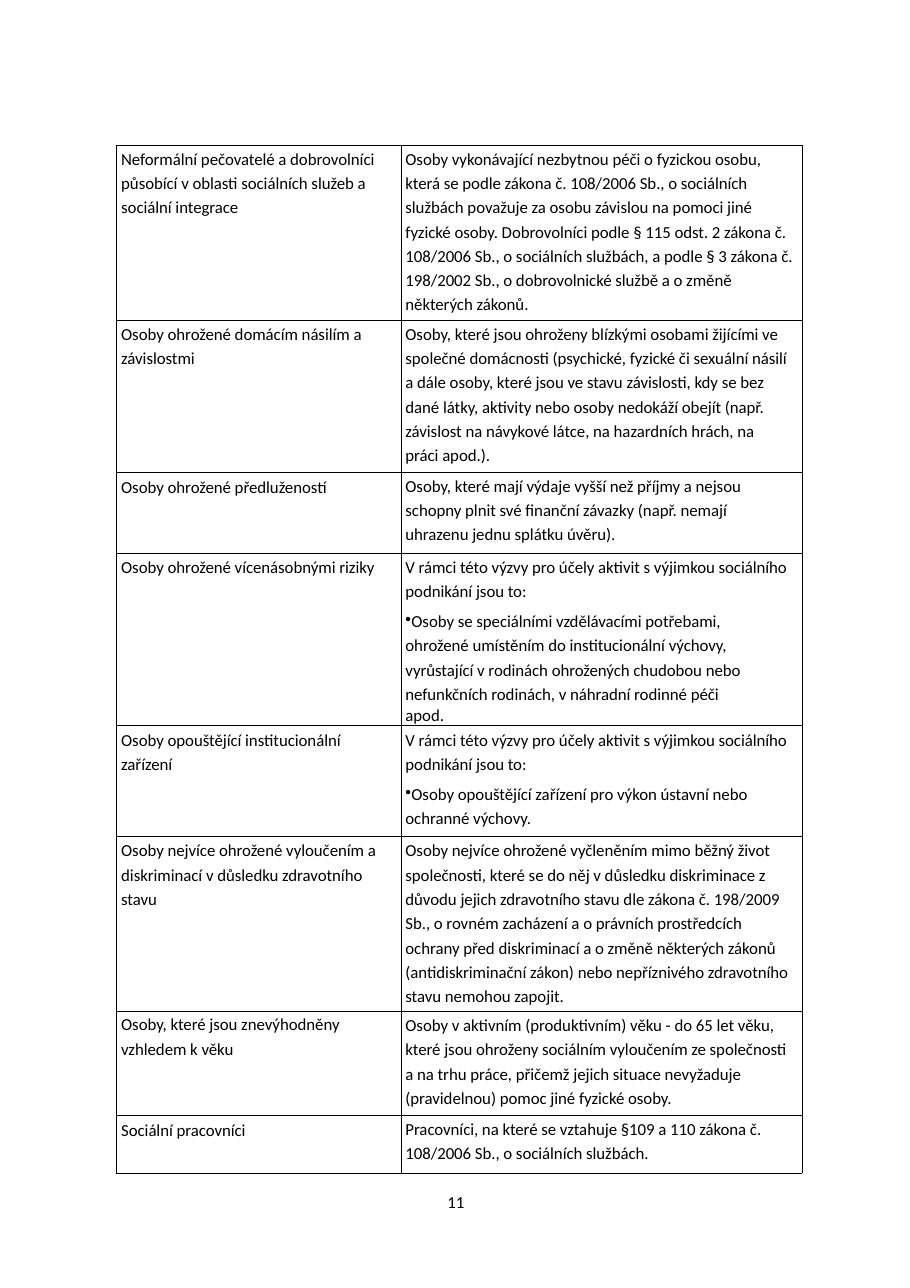
from pptx import Presentation
from pptx.dml.color import RGBColor
from pptx.oxml import parse_xml
from pptx.oxml.ns import nsdecls
from pptx.util import Inches, Pt

WIDTH, HEIGHT = 8.26, 11.69
LEFT, TOP = 1.06, 1.32
COLUMNS = (2.58, 3.64)
INDENT = 0.04
BLACK = "000000"
LOOSE = 1.17

SCOPE = {"text": "V rámci této výzvy pro účely aktivit s výjimkou sociálního podnikání jsou to:",
         "spacing": 1.16}


def para(text, spacing=LOOSE, before=0, bullet=None):
    return {"text": text, "spacing": spacing, "before": before, "bullet": bullet}


# Each row: height, group, top inset of the group, description, top inset of the description
ROWS = [
    (1.59,
     [para("Neformální pečovatelé a dobrovolníci působící v oblasti sociálních služeb a sociální integrace")], 0,
     [para("Osoby vykonávající nezbytnou péči o fyzickou osobu,\vkterá se podle zákona č. 108/2006 Sb., "
           "o sociálních\vslužbách považuje za osobu závislou na pomoci jiné"),
      para("fyzické osoby. Dobrovolníci podle § 115 odst. 2 zákona č. 108/2006 Sb., o sociálních službách, "
           "a podle § 3 zákona č. 198/2002 Sb., o dobrovolnické službě a o změně"),
      para("některých zákonů.", None, 2.2)], 0),
    (1.38,
     [para("Osoby ohrožené domácím násilím a závislostmi")], 0,
     [para("Osoby, které jsou ohroženy blízkými osobami žijícími ve společné domácnosti (psychické, fyzické "
           "či sexuální násilí\va dále osoby, které jsou ve stavu závislosti, kdy se bez\vdané látky, "
           "aktivity nebo osoby nedokáží obejít (např. závislost na návykové látce, na hazardních hrách, na"),
      para("práci apod.).", None, 2.1)], 0),
    (0.73,
     [para("Osoby ohrožené předlužeností", None)], 0.04,
     [para("Osoby, které mají výdaje vyšší než příjmy a nejsou\vschopny plnit své finanční závazky "
           "(např. nemají\vuhrazenu jednu splátku úvěru).")], 0),
    (1.43,
     [para("Osoby ohrožené vícenásobnými riziky", None)], 0.04,
     [SCOPE,
      para("Osoby se speciálními vzdělávacími potřebami,\vohrožené umístěním do institucionální výchovy,\v"
           "vyrůstající v rodinách ohrožených chudobou nebo", before=3.6, bullet="•"),
      para("nefunkčních rodinách, v náhradní rodinné péči\vapod.", None, 2.3)], 0.01),
    (1.0,
     [para("Osoby opouštějící institucionální\vzařízení", 1.16)], 0.01,
     [SCOPE,
      para("Osoby opouštějící zařízení pro výkon ústavní nebo\vochranné výchovy.", before=3.6, bullet="•")], 0.01),
    (1.59,
     [para("Osoby nejvíce ohrožené vyloučením a diskriminací v důsledku zdravotního stavu")], 0.01,
     [para("Osoby nejvíce ohrožené vyčleněním mimo běžný život společnosti, které se do něj v důsledku "
           "diskriminace z důvodu jejich zdravotního stavu dle zákona č. 198/2009 Sb., "
           "o rovném zacházení a o právních prostředcích"),
      para("ochrany před diskriminací a o změně některých zákonů (antidiskriminační zákon) nebo "
           "nepříznivého zdravotního stavu nemohou zapojit.", Pt(15.5), 0.8)], 0.01),
    (0.95,
     [para("Osoby, které jsou znevýhodněny\vvzhledem k věku")], 0,
     [para("Osoby v aktivním (produktivním) věku - do 65 let věku,", None),
      para("které jsou ohroženy sociálním vyloučením ze společnosti\va na trhu práce, přičemž jejich "
           "situace nevyžaduje"),
      para("(pravidelnou) pomoc jiné fyzické osoby.", None, 2.3)], 0.04),
    (0.52,
     [para("Sociální pracovníci", None)], 0.04,
     [para("Pracovníci, na které se vztahuje §109 a 110 zákona č. 108/2006 Sb., o sociálních službách.")], 0),
]


def color(value):
    return RGBColor.from_string(value)


def write(p, text, spacing=None, before=0, bullet=None, indent=INDENT, size=11, tracking=-5):
    p.text = text
    pPr = p._p.get_or_add_pPr()
    pPr.set("marL", str(Inches(indent)))
    pPr.set("indent", "0")
    if bullet:
        pPr.append(parse_xml(f'<a:buChar {nsdecls("a")} char="{bullet}"/>'))
    if spacing:
        p.line_spacing = spacing
    if before:
        p.space_before = Pt(before)
    for r in p.runs:
        r.font.name = "Calibri"
        r.font.size = Pt(size)
        r.font.color.rgb = color(BLACK)
        r._r.get_or_add_rPr().set("spc", str(tracking))


def add_borders(cell, value=BLACK, width=0.5):
    tcPr = cell._tc.get_or_add_tcPr()
    for side in "LRTB":
        tcPr.append(parse_xml(
            f'<a:ln{side} {nsdecls("a")} w="{Pt(width)}"><a:solidFill>'
            f'<a:srgbClr val="{value}"/></a:solidFill></a:ln{side}>'))


def fill_cell(cell, paragraphs, top):
    cell.margin_left = cell.margin_right = cell.margin_bottom = 0
    cell.margin_top = Inches(top)
    add_borders(cell)
    cell.fill.background()
    tf = cell.text_frame
    for i, item in enumerate(paragraphs):
        write(tf.add_paragraph() if i else tf.paragraphs[0], **item)


def add_groups_table(s):
    height = sum(row[0] for row in ROWS)
    frame = s.shapes.add_table(len(ROWS), len(COLUMNS), Inches(LEFT), Inches(TOP),
                               Inches(sum(COLUMNS)), Inches(height))
    table = frame.table
    table.first_row = table.horz_banding = False
    for column, width in zip(table.columns, COLUMNS):
        column.width = Inches(width)
    for row, (height, group, group_top, description, description_top) in zip(table.rows, ROWS):
        row.height = Inches(height)
        fill_cell(row.cells[0], group, group_top)
        fill_cell(row.cells[1], description, description_top)


def add_page_number(s, number):
    sp = s.shapes.add_textbox(Inches(4.03), Inches(10.84), Inches(0.21), Inches(0.18))
    tf = sp.text_frame
    tf.margin_left = tf.margin_right = tf.margin_top = tf.margin_bottom = 0
    tf.word_wrap = True
    write(tf.paragraphs[0], number, spacing=Pt(11.5), indent=0.03, tracking=0)


def main():
    prs = Presentation()
    prs.slide_width, prs.slide_height = Inches(WIDTH), Inches(HEIGHT)
    s = prs.slides.add_slide(prs.slide_layouts[6])
    add_groups_table(s)
    add_page_number(s, "11")
    prs.save("out.pptx")


if __name__ == "__main__":
    main()
